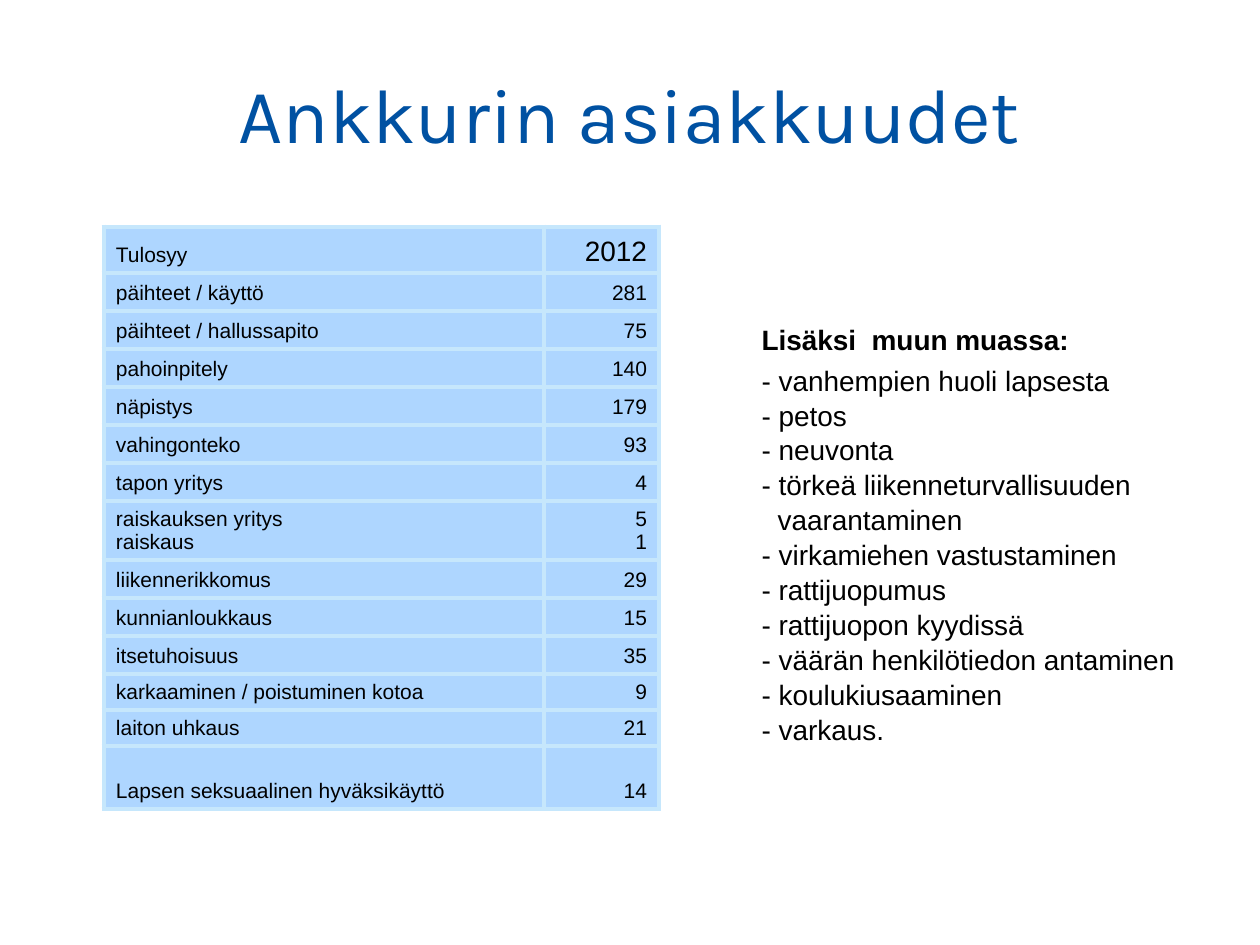
from dataclasses import dataclass

from lxml import etree
from pptx import Presentation
from pptx import util as u
from pptx.dml.color import RGBColor
from pptx.enum import text
from pptx.oxml import ns

PX_PER_INCH = 126
BODY_FONT, TITLE_FONT = "Arial", "Karla"
BLACK, TITLE_BLUE, CELL_BLUE, BORDER_BLUE = "000000", "0051A2", "5EAEFF", "C6E7FC"
BORDER_PT = 3


@dataclass
class Reason:
    names: list[str]
    counts: list[str]
    height: int = 38
    count_size: int = 12


REASONS = [
    Reason(["Tulosyy"], ["2012"], 46, 16),
    Reason(["päihteet / käyttö"], ["281"]),
    Reason(["päihteet / hallussapito"], ["75"]),
    Reason(["pahoinpitely"], ["140"]),
    Reason(["näpistys"], ["179"]),
    Reason(["vahingonteko"], ["93"]),
    Reason(["tapon yritys"], ["4"]),
    Reason(["raiskauksen yritys", "raiskaus"], ["5", "1"], 59),
    Reason(["liikennerikkomus"], ["29"]),
    Reason(["kunnianloukkaus"], ["15"]),
    Reason(["itsetuhoisuus"], ["35"]),
    Reason(["karkaaminen / poistuminen kotoa"], ["9"], 36),
    Reason(["laiton uhkaus"], ["21"], 36),
    Reason(["Lapsen seksuaalinen hyväksikäyttö"], ["14"], 63),
]

OTHERS = [
    "vanhempien huoli lapsesta",
    "petos",
    "neuvonta",
    "törkeä liikenneturvallisuuden vaarantaminen",
    "virkamiehen vastustaminen",
    "rattijuopumus",
    "rattijuopon kyydissä",
    "väärän henkilötiedon antaminen",
    "koulukiusaaminen",
    "varkaus.",
]


def px(length: int) -> int:
    return round(length * u.Inches(1) / PX_PER_INCH)


def color(value: str) -> RGBColor:
    return RGBColor.from_string(value)


def place(shape, left: int, top: int, width: int, height: int) -> None:
    shape.left, shape.top = px(left), px(top)
    shape.width, shape.height = px(width), px(height)


def add_span(para, words: str, size: int, font: str = BODY_FONT,
             fill: str = BLACK, bold: bool = False) -> None:
    span = para.add_run()
    span.text = words
    span.font.name, span.font.size, span.font.bold = font, u.Pt(size), bold
    span.font.color.rgb = color(fill)


def next_para(frame, index: int):
    return frame.add_paragraph() if index else frame.paragraphs[0]


def add_title(slide) -> None:
    title = slide.shapes.title
    place(title, 63, 40, 1134, 125)
    frame = title.text_frame
    frame.auto_size = text.MSO_AUTO_SIZE.NONE
    frame.vertical_anchor = text.MSO_ANCHOR.BOTTOM
    para = frame.paragraphs[0]
    para.alignment = text.PP_ALIGN.CENTER
    add_span(para, "Ankkurin asiakkuudet", 44, TITLE_FONT, TITLE_BLUE)


def add_others(slide) -> None:
    body = slide.placeholders[1]
    place(body, 749, 315, 535, 429)
    frame = body.text_frame
    frame.auto_size = text.MSO_AUTO_SIZE.NONE
    frame.vertical_anchor = text.MSO_ANCHOR.TOP
    lines = ["Lisäksi  muun muassa:"] + [f"- {item}" for item in OTHERS]
    for index, line in enumerate(lines):
        para = next_para(frame, index)
        hanging = px(16) if index else 0
        props = para._p.get_or_add_pPr()
        props.set("marL", str(hanging))
        props.set("indent", str(-hanging))
        etree.SubElement(props, ns.qn("a:buNone"))
        para.alignment = text.PP_ALIGN.LEFT
        para.line_spacing = 1.04
        para.space_before = u.Pt(3.2 if index == 1 else 0)
        add_span(para, line, 16, bold=index == 0)


def style_cell(cell) -> None:
    """Half-transparent fill, even borders and text resting on the bottom."""
    cell.vertical_anchor = text.MSO_ANCHOR.BOTTOM
    cell.margin_left = cell.margin_right = px(12)
    cell.margin_top = cell.margin_bottom = px(6)
    cell.fill.solid()
    cell.fill.fore_color.rgb = color(CELL_BLUE)
    props = cell._tc.get_or_add_tcPr()
    tint = props.find(".//" + ns.qn("a:srgbClr"))
    etree.SubElement(tint, ns.qn("a:alpha"), val="50000")
    for index, side in enumerate(("lnL", "lnR", "lnT", "lnB")):
        line = etree.Element(ns.qn(f"a:{side}"), w=str(u.Pt(BORDER_PT)))
        fill = etree.SubElement(line, ns.qn("a:solidFill"))
        etree.SubElement(fill, ns.qn("a:srgbClr"), val=BORDER_BLUE)
        props.insert(index, line)


def fill_cell(cell, lines: list[str], size: int, alignment) -> None:
    style_cell(cell)
    for index, line in enumerate(lines):
        para = next_para(cell.text_frame, index)
        para.alignment = alignment
        add_span(para, line, size)


def add_reasons(slide) -> None:
    widths = (440, 115)
    height = sum(reason.height for reason in REASONS)
    table = slide.shapes.add_table(len(REASONS), len(widths), px(104), px(227),
                                   px(sum(widths)), px(height)).table
    table.first_row = table.horz_banding = False
    for column, width in zip(table.columns, widths):
        column.width = px(width)
    for row, reason in zip(table.rows, REASONS):
        row.height = px(reason.height)
        name, count = row.cells
        fill_cell(name, reason.names, 12, text.PP_ALIGN.LEFT)
        fill_cell(count, reason.counts, reason.count_size, text.PP_ALIGN.RIGHT)


def main() -> None:
    deck = Presentation()
    deck.slide_width, deck.slide_height = u.Inches(10), u.Inches(7.5)
    slide = deck.slides.add_slide(deck.slide_layouts[1])
    add_others(slide)
    add_reasons(slide)
    add_title(slide)
    deck.save("out.pptx")


if __name__ == "__main__":
    main()
